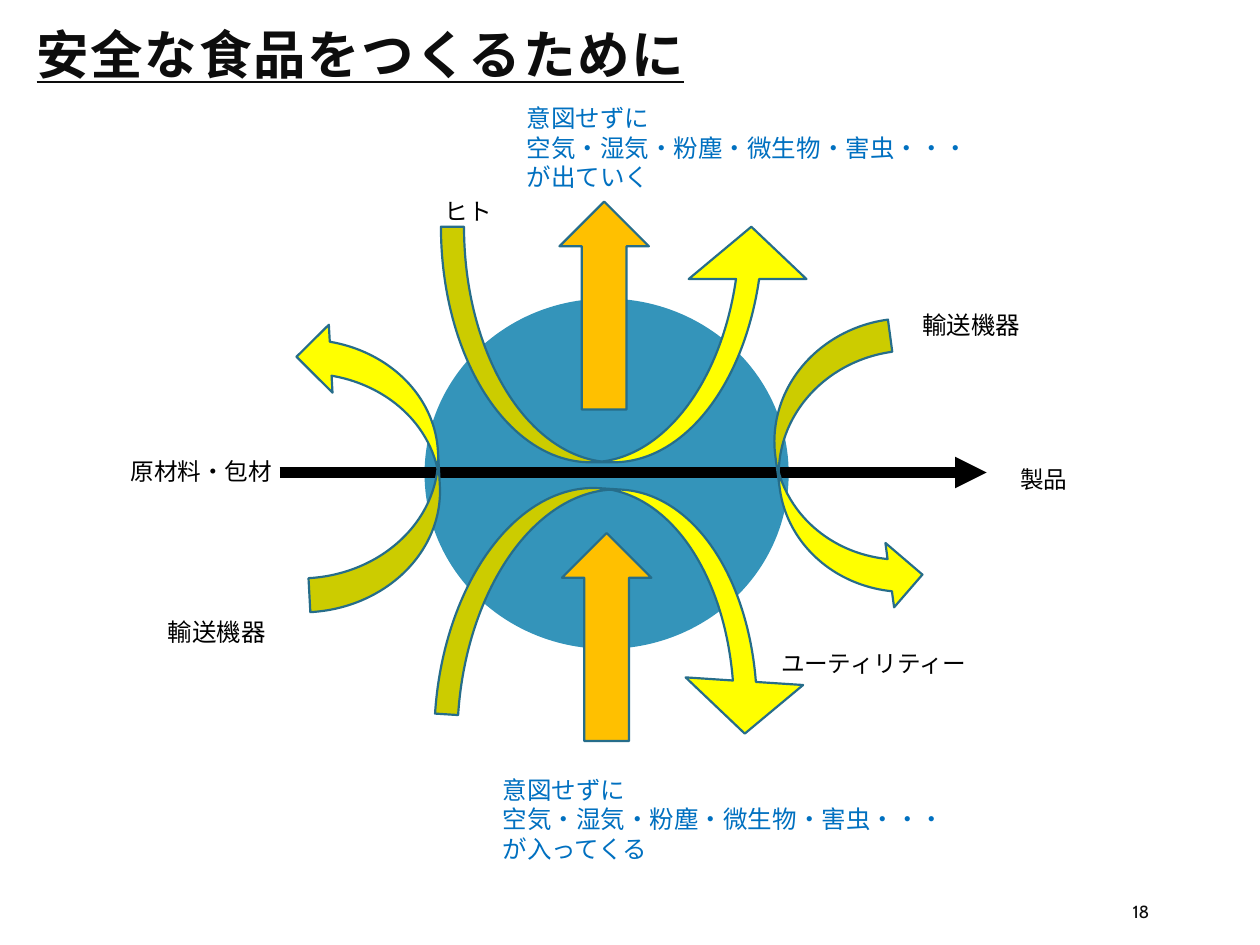
from dataclasses import dataclass
from typing import NamedTuple

from lxml.etree import SubElement
from pptx import Presentation
from pptx.dml.color import RGBColor
from pptx.enum.shapes import MSO_CONNECTOR as Connector, MSO_SHAPE as Preset
from pptx.enum.text import MSO_ANCHOR as Anchor, MSO_AUTO_SIZE as AutoSize, PP_ALIGN as Align
from pptx.oxml.ns import qn
from pptx.util import Pt


@dataclass(frozen=True)
class Theme:
    ink: str = "000000"
    heading: str = "0D0D0D"
    note: str = "0070C0"
    factory: str = "3494BA"
    flow: str = "FFFF00"
    air: str = "FFC000"
    outline: str = "266D8A"
    body_font: str = "Calibri"
    heading_font: str = "Cabin"
    title_size: float = 30
    note_size: float = 14
    label_size: float = 13.5
    number_size: float = 10


class Box(NamedTuple):
    left: float
    top: float
    width: float
    height: float


class Label(NamedTuple):
    text: str
    box: Box
    size: float = Theme.label_size
    color: str = Theme.ink


class Arrow(NamedTuple):
    box: Box
    preset: Preset = Preset.CURVED_UP_ARROW
    color: str = Theme.flow
    rotation: float = 0
    flipped: bool = False
    adjustments: tuple[float, ...] = ()


THEME = Theme()
SLENDER = (0.098, 0.5, 0.222)
NOTE = "意図せずに\n空気・湿気・粉塵・微生物・害虫・・・\n"

FLOWS = (
    Arrow(Box(128.9, 226.1, 165.6, 77.8), rotation=266.9),
    Arrow(Box(252, 129.6, 211, 134.6), adjustments=SLENDER),
    Arrow(Box(398.9, 232.6, 165.6, 74.2), rotation=82.3),
    Arrow(Box(252.7, 280.1, 211, 134.6), rotation=183.7, flipped=True, adjustments=SLENDER),
    Arrow(Box(321.1, 304.6, 51.1, 118.8), Preset.UP_ARROW, THEME.air),
    Arrow(Box(319.7, 115.2, 51.1, 118.8), Preset.UP_ARROW, THEME.air),
)

LABELS = (
    Label("原材料・包材", Box(67.7, 257.8, 96.5, 23.8)),
    Label("製品", Box(576, 262.1, 41.8, 23.8)),
    Label("ヒト", Box(247, 108.7, 41.8, 23.8)),
    Label("ユーティリティー", Box(439.2, 367.2, 123.8, 23.8)),
    Label("輸送機器", Box(88.6, 349.2, 71.3, 24.5), THEME.note_size),
    Label("輸送機器", Box(519.8, 173.5, 71.3, 24.5), THEME.note_size),
    Label(NOTE + "が入ってくる", Box(280.1, 439.2, 269.3, 58.3), THEME.note_size, THEME.note),
    Label(NOTE + "が出ていく", Box(293.8, 55.4, 269.3, 58.3), THEME.note_size, THEME.note),
)


def points(box: Box) -> tuple:
    """Convert a box to lengths in points."""
    return tuple(Pt(length) for length in box)


def write(frame, text: str, *, size: float, color: str, font: str = THEME.body_font,
          bold: bool = False, underline: bool = False, spacing: float = 0,
          line_spacing: float | None = None, wrap: bool = True,
          anchor: Anchor = Anchor.TOP, fit: AutoSize = AutoSize.NONE) -> None:
    """Fill a text frame with left-aligned paragraphs in one format."""
    frame.text = text
    frame.word_wrap = wrap
    frame.auto_size = fit
    frame.vertical_anchor = anchor
    for paragraph in frame.paragraphs:
        paragraph.alignment = Align.LEFT
        if line_spacing:
            paragraph.line_spacing = line_spacing
        for run in paragraph.runs:
            run.font.size = Pt(size)
            run.font.name = font
            run.font.bold = bold
            run.font.underline = underline
            run.font.color.rgb = RGBColor.from_string(color)
            if spacing:
                run.font._element.set("spc", str(round(spacing * 100)))


def draw_preset(slide, preset: Preset, box: Box, color: str, outline: str | None = None):
    """Draw a filled preset shape, with an outline if a colour is given."""
    drawn = slide.shapes.add_shape(preset, *points(box))
    drawn.shadow.inherit = False
    drawn.fill.solid()
    drawn.fill.fore_color.rgb = RGBColor.from_string(color)
    if outline:
        drawn.line.color.rgb = RGBColor.from_string(outline)
        drawn.line.width = Pt(1.25)
    else:
        drawn.line.fill.background()
    return drawn


def draw_arrow(slide, arrow: Arrow) -> None:
    """Draw one block arrow with its turn, mirroring and proportions."""
    drawn = draw_preset(slide, arrow.preset, arrow.box, arrow.color, THEME.outline)
    drawn.rotation = arrow.rotation
    if arrow.flipped:
        drawn._element.spPr.find(qn("a:xfrm")).set("flipH", "1")
    for index, value in enumerate(arrow.adjustments):
        drawn.adjustments[index] = value


def draw_process_line(slide) -> None:
    """Draw the thick arrow from raw materials to product."""
    process = slide.shapes.add_connector(
        Connector.STRAIGHT, Pt(159.8), Pt(270), Pt(563.8), Pt(270))
    process.line.color.rgb = RGBColor.from_string(THEME.ink)
    process.line.width = Pt(6)
    SubElement(process.line._get_or_add_ln(), qn("a:tailEnd"), type="triangle")
    SubElement(process._element.spPr, qn("a:effectLst"))


def draw_label(slide, label: Label) -> None:
    """Add one unwrapped label."""
    holder = slide.shapes.add_textbox(*points(label.box))
    write(holder.text_frame, label.text, size=label.size, color=label.color,
          wrap=False, fit=AutoSize.SHAPE_TO_FIT_TEXT)


def main() -> None:
    """Build and save the slide."""
    deck = Presentation()
    deck.slide_width, deck.slide_height = Pt(720), Pt(540)
    slide = deck.slides.add_slide(deck.slide_layouts[5])

    title = slide.shapes.title
    title.left, title.top, title.width, title.height = points(Box(13.7, 15.8, 626.4, 62.6))
    write(title.text_frame, "安全な食品をつくるために", size=THEME.title_size,
          color=THEME.heading, font=THEME.heading_font, bold=True, underline=True,
          spacing=1, line_spacing=0.8)

    draw_preset(slide, Preset.OVAL, Box(242.6, 170.6, 208.1, 200.2), THEME.factory)
    draw_process_line(slide)
    for flow in FLOWS:
        draw_arrow(slide, flow)
    for label in LABELS:
        draw_label(slide, label)

    page_number = slide.shapes.add_textbox(*points(Box(640.1, 509.8, 57.6, 21.6)))
    write(page_number.text_frame, "18", size=THEME.number_size, color=THEME.heading,
          font=THEME.heading_font, anchor=Anchor.MIDDLE)

    deck.save("out.pptx")


if __name__ == "__main__":
    main()
